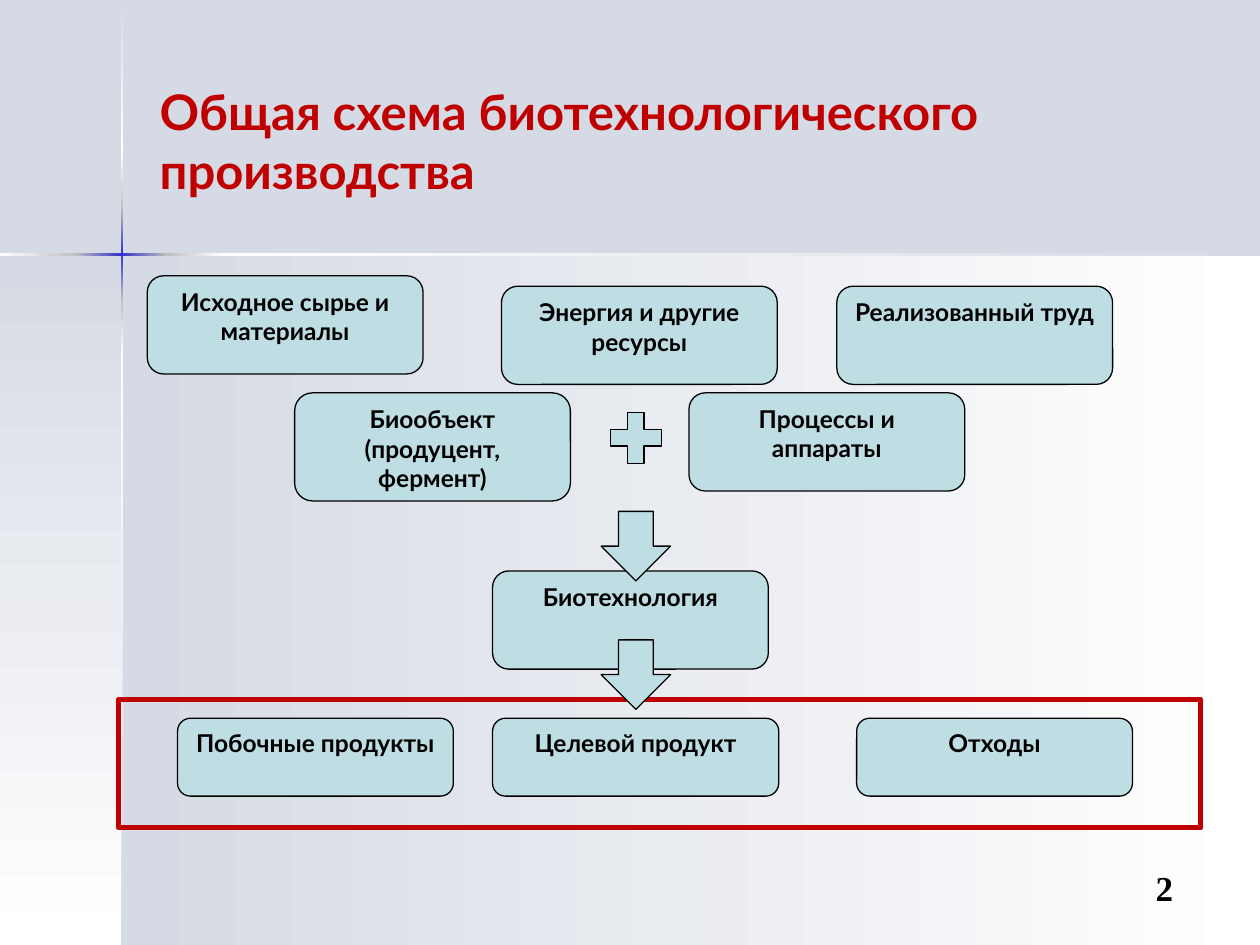
from copy import deepcopy

from pptx import Presentation
from pptx.dml.color import RGBColor
from pptx.enum.shapes import MSO_SHAPE
from pptx.enum.text import MSO_ANCHOR, PP_ALIGN
from pptx.util import Cm, Pt

MIST = RGBColor(0xD6, 0xDA, 0xE4)
WHITE = RGBColor(0xFF, 0xFF, 0xFF)
GREY = RGBColor(0xC0, 0xC0, 0xC0)
BLUE = RGBColor(0x33, 0x33, 0xCC)
TEAL = RGBColor(0xBF, 0xDE, 0xE3)
RED = RGBColor(0xC0, 0x00, 0x00)
BLACK = RGBColor(0x00, 0x00, 0x00)

prs = Presentation()
prs.slide_width, prs.slide_height = Cm(25.4), Cm(19.05)
s = prs.slides.add_slide(prs.slide_layouts[6])
s.background.fill.solid()
s.background.fill.fore_color.rgb = MIST


def add_shape(kind, x, y, w, h, fill=None, line=None, width=0.75):
    sp = s.shapes.add_shape(kind, Cm(x), Cm(y), Cm(w), Cm(h))
    sp.shadow.inherit = False
    if fill is None:
        sp.fill.background()
    elif isinstance(fill, RGBColor):
        sp.fill.solid()
        sp.fill.fore_color.rgb = fill
    else:  # evenly spaced gradient colours
        sp.fill.gradient()
        gs_list = sp.fill._fill._gradFill.gsLst
        for _ in fill[2:]:
            gs_list.append(deepcopy(gs_list[-1]))
        for i, (stop, color) in enumerate(zip(sp.fill.gradient_stops, fill)):
            stop.color.rgb = color
            stop.position = i / (len(fill) - 1)
        sp.fill.gradient_angle = 270 if h > w else 0
    if line is None:
        sp.line.fill.background()
    else:
        sp.line.color.rgb = line
        sp.line.width = Pt(width)
    return sp


def add_text(tf, text, size, color, align, font="Lato"):
    tf.word_wrap = True
    p = tf.paragraphs[0]
    p.alignment = align
    r = p.add_run()
    r.text = text
    r.font.name, r.font.size, r.font.bold = font, Pt(size), True
    r.font.color.rgb = color


# Background panels
add_shape(MSO_SHAPE.RECTANGLE, 2.46, 5.13, 22.94, 13.92, (MIST, WHITE))
add_shape(MSO_SHAPE.RECTANGLE, 0, 5.13, 2.46, 13.92, (MIST, WHITE))

# Crossing glow lines: start, end, colours
for top, bottom, colors in [
    (0.03, 3.07, (MIST, WHITE)),
    (7.16, 19.05, (WHITE, MIST)),
    (6.05, 7.16, (GREY, WHITE)),
    (3.07, 4.19, (WHITE, GREY)),
    (4.19, 6.05, (GREY, BLUE, GREY)),
]:
    add_shape(MSO_SHAPE.RECTANGLE, 2.44, top, 0.05, bottom - top, colors)
for left, right, colors in [
    (4.5, 25.4, (WHITE, MIST)),
    (0, 1.55, (WHITE, GREY)),
    (3.38, 4.5, (GREY, WHITE)),
    (1.52, 3.38, (GREY, BLUE, GREY)),
]:
    add_shape(MSO_SHAPE.RECTANGLE, left, 5.11, right - left, 0.05, colors)

# Title and slide number
tf = s.shapes.add_textbox(Cm(2.97), Cm(0.84), Cm(20.96), Cm(3.99)).text_frame
tf.vertical_anchor = MSO_ANCHOR.MIDDLE
add_text(tf, "Общая схема биотехнологического производства", 28, RED, PP_ALIGN.LEFT)
tf = s.shapes.add_textbox(Cm(18.62), Cm(17.35), Cm(5.28), Cm(1.27)).text_frame
add_text(tf, "2", 20, BLACK, PP_ALIGN.RIGHT, "Times New Roman")

# Scheme boxes
BOX_W, BOX_H, PRODUCT_H = 5.56, 1.98, 1.57
for text, x, y, w, h in [
    ("Исходное сырье и материалы", 2.97, 5.56, BOX_W, BOX_H),
    ("Энергия и другие ресурсы", 10.11, 5.77, BOX_W, BOX_H),
    ("Реализованный труд", 16.87, 5.77, BOX_W, BOX_H),
    ("Биообъект (продуцент, фермент)", 5.94, 7.92, BOX_W, 2.18),
    ("Процессы и аппараты", 13.89, 7.92, BOX_W, BOX_H),
    ("Биотехнология", 9.93, 11.51, BOX_W, BOX_H),
    ("Целевой продукт", 9.93, 14.48, 5.77, PRODUCT_H),
    ("Побочные продукты", 3.58, 14.48, BOX_W, PRODUCT_H),
    ("Отходы", 17.27, 14.48, BOX_W, PRODUCT_H),
]:
    sp = add_shape(MSO_SHAPE.ROUNDED_RECTANGLE, x, y, w, h, TEAL, BLACK)
    sp.text_frame.vertical_anchor = MSO_ANCHOR.TOP
    add_text(sp.text_frame, text, 14, BLACK, PP_ALIGN.CENTER)

# Frame around the products, then plus sign and arrows
add_shape(MSO_SHAPE.RECTANGLE, 2.39, 14.1, 21.82, 2.59, line=RED, width=3)
for kind, y in [
    (MSO_SHAPE.MATH_PLUS, 8.13),
    (MSO_SHAPE.DOWN_ARROW, 10.31),
    (MSO_SHAPE.DOWN_ARROW, 12.9),
]:
    add_shape(kind, 12.12, y, 1.4, 1.4, TEAL, BLACK)

prs.save("out.pptx")
